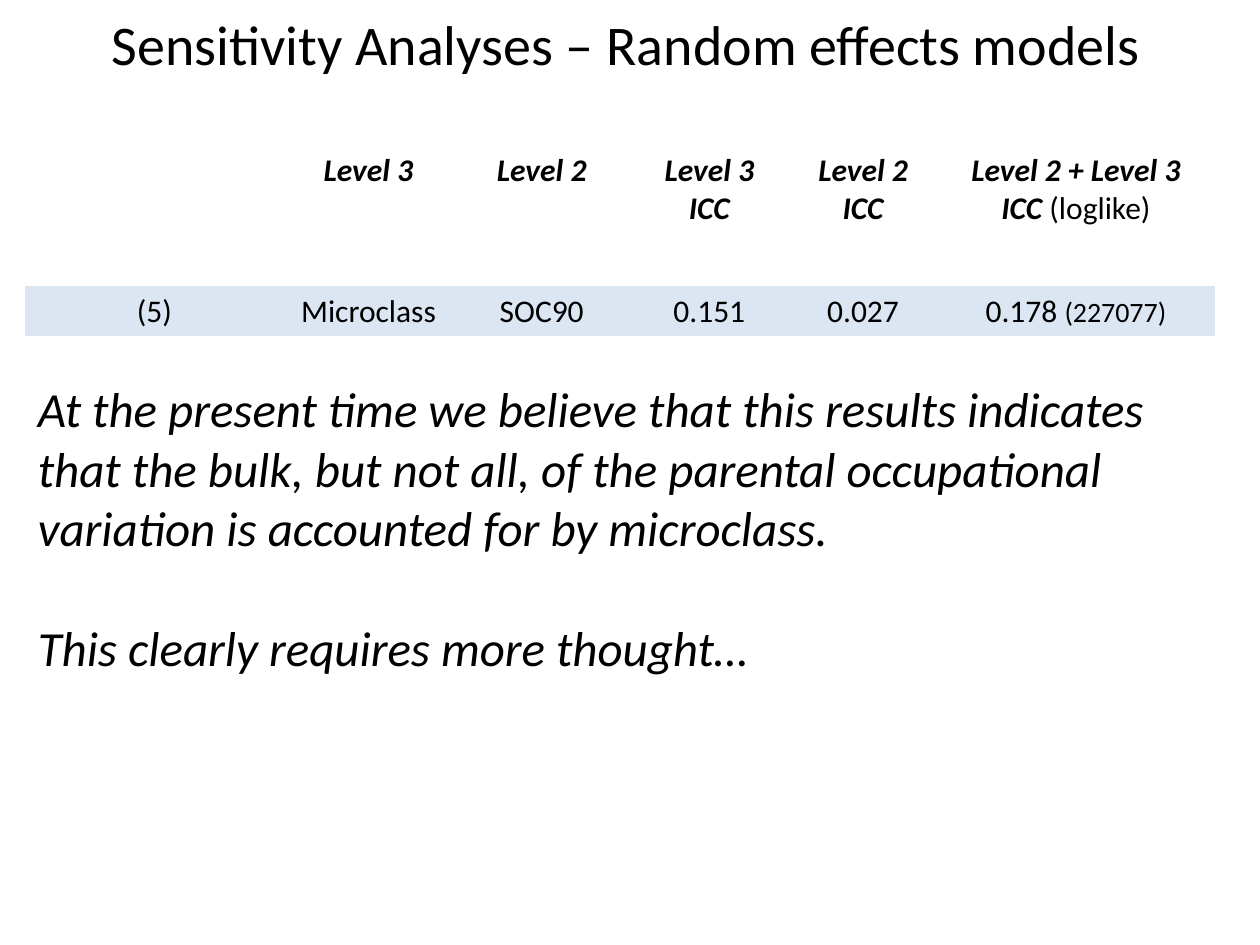
from typing import NamedTuple

from pptx import Presentation
from pptx.dml.color import RGBColor
from pptx.enum.text import MSO_ANCHOR, PP_ALIGN
from pptx.util import Inches, Pt

CENTER, LEFT = PP_ALIGN.CENTER, PP_ALIGN.LEFT
MIDDLE = MSO_ANCHOR.MIDDLE
FONT = "Calibri"
COLORS = {"text": "000000", "result": "DCE6F2"}
PLAIN_TABLE_STYLE = "{2D5ABB26-0587-4C30-8999-92F81FD0307C}"

COL_WIDTHS = [2.05, 1.35, 1.4, 1.26, 1.18, 2.2]
ROW_HEIGHTS = [0.71, 0.41, 0.4, 2.72]
HEADER_ROW, RESULT_ROW, COMMENT_ROW = 0, 2, 3


class Entry(NamedTuple):
    """A column's heading and result, each with an optional plain ending."""
    heading: str
    result: str
    heading_note: str = ""
    result_note: str = ""


ENTRIES = [
    Entry("", "(5)"),
    Entry("Level 3", "Microclass"),
    Entry("Level 2", "SOC90"),
    Entry("Level 3 ICC", "0.151"),
    Entry("Level 2 ICC", "0.027"),
    Entry("Level 2 + Level 3 ICC ", "0.178 ", "(loglike)", "(227077)"),
]
COMMENTS = [
    "At the present time we believe that this results indicates that the bulk, "
    "but not all, of the parental occupational variation is accounted for by microclass.",
    "This clearly requires more thought…",
]


def add_text(p, text: str, *, size: float = 18, bold: bool = False,
             italic: bool = False, align=CENTER) -> None:
    p.alignment = align
    r = p.add_run()
    r.text = text
    r.font.name = FONT
    r.font.size = Pt(size)
    r.font.bold = bold
    r.font.italic = italic
    r.font.color.rgb = RGBColor.from_string(COLORS["text"])


def add_title(s, text: str) -> None:
    tf = s.shapes.add_textbox(Inches(0.47), Inches(0), Inches(9), Inches(0.69)).text_frame
    tf.word_wrap = True
    tf.vertical_anchor = MIDDLE
    add_text(tf.paragraphs[0], text, size=32)


def add_results_table(s):
    """Add the unstyled grid, with only the result row filled."""
    table = s.shapes.add_table(
        len(ROW_HEIGHTS), len(COL_WIDTHS), Inches(0.2), Inches(1.15),
        Inches(sum(COL_WIDTHS)), Inches(sum(ROW_HEIGHTS))).table
    table.first_row = table.horz_banding = False
    table._tbl.tblPr[0].text = PLAIN_TABLE_STYLE
    for col, width in zip(table.columns, COL_WIDTHS):
        col.width = Inches(width)
    for i, height in enumerate(ROW_HEIGHTS):
        table.rows[i].height = Inches(height)
        for cell in table.rows[i].cells:
            if i == RESULT_ROW:
                cell.fill.solid()
                cell.fill.fore_color.rgb = RGBColor.from_string(COLORS["result"])
            else:
                cell.fill.background()
    return table


def fill_entries(table) -> None:
    for j, entry in enumerate(ENTRIES):
        heading = table.cell(HEADER_ROW, j).text_frame.paragraphs[0]
        result = table.cell(RESULT_ROW, j).text_frame.paragraphs[0]
        if entry.heading:
            add_text(heading, entry.heading, bold=True, italic=True)
        if entry.heading_note:
            add_text(heading, entry.heading_note)
        add_text(result, entry.result)
        if entry.result_note:
            add_text(result, entry.result_note, size=16)


def fill_comments(table) -> None:
    cell = table.cell(COMMENT_ROW, 0)
    cell.merge(table.cell(COMMENT_ROW, len(COL_WIDTHS) - 1))
    cell.margin_top = Inches(0.35)
    tf = cell.text_frame
    for i, comment in enumerate(COMMENTS):
        p = tf.add_paragraph() if i else tf.paragraphs[0]
        if i:
            p.space_before = Pt(34)
        add_text(p, comment, size=28, italic=True, align=LEFT)


def main() -> None:
    prs = Presentation()
    prs.slide_width, prs.slide_height = Inches(10), Inches(7.5)
    s = prs.slides.add_slide(prs.slide_layouts[6])
    add_title(s, "Sensitivity Analyses – Random effects models")
    table = add_results_table(s)
    fill_entries(table)
    fill_comments(table)
    prs.save("out.pptx")


if __name__ == "__main__":
    main()
